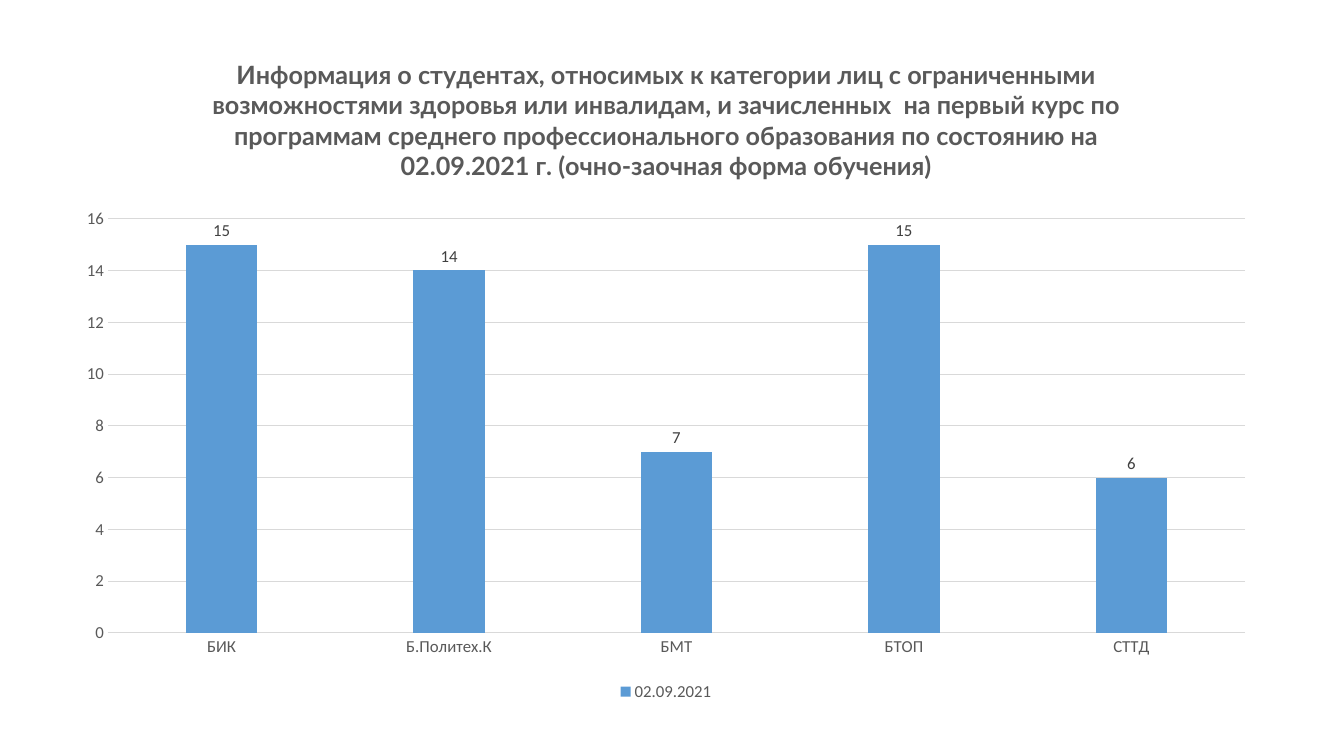
"""Builds a slide with a column chart of first-year student numbers by college."""
from lxml.etree import SubElement
from pptx import Presentation
from pptx.chart.data import CategoryChartData
from pptx.dml.color import RGBColor
from pptx.enum.chart import XL_CHART_TYPE, XL_LABEL_POSITION, XL_LEGEND_POSITION, XL_TICK_MARK
from pptx.oxml import parse_xml
from pptx.oxml.ns import nsdecls, qn
from pptx.util import Inches, Pt

HEADING = (
    "Информация о студентах, относимых к категории лиц с ограниченными "
    "возможностями здоровья или инвалидам, и зачисленных  на первый курс по "
    "программам среднего профессионального образования по состоянию на "
    "02.09.2021 г. (очно-заочная форма обучения)"
)
REPORT_DATE = "02.09.2021"
STUDENTS = {"БИК": 15, "Б.Политех.К": 14, "БМТ": 7, "БТОП": 15, "СТТД": 6}
COLORS = {"background": "FFFFFF", "columns": "5B9BD5", "text": "595959",
          "values": "404040", "lines": "D9D9D9"}
CHART_BOX = (0.62, 0.45, 11.97, 6.55)
HEADING_CORNER = {"x": 1.44, "y": 0.06}
PLOT_BOX = {"x": 0.45, "y": 1.72, "w": 11.28, "h": 4.11}


def color(name):
    return RGBColor.from_string(COLORS[name])


def style(font, size=12, tone="text", face="Calibri", bold=False):
    font.size = Pt(size)
    font.bold = bold
    font.name = face
    font.color.rgb = color(tone)


def write(frame, text, **text_format):
    run = frame.paragraphs[0].add_run()
    run.text = text
    style(run.font, **text_format)


def draw_line(line):
    line.color.rgb = color("lines")
    line.width = Pt(0.75)


def place(part, index, box, inner=False):
    for automatic in part.findall(qn("c:layout")):
        part.remove(automatic)
    layout = parse_xml(f"<c:layout {nsdecls('c')}><c:manualLayout/></c:layout>")
    manual = layout[0]
    if inner:
        SubElement(manual, qn("c:layoutTarget")).set("val", "inner")
    for side in ("x", "y"):
        SubElement(manual, qn(f"c:{side}Mode")).set("val", "edge")
    extents = dict(zip("xywh", CHART_BOX[2:] * 2))
    for side, inches in box.items():
        SubElement(manual, qn(f"c:{side}")).set("val", str(inches / extents[side]))
    part.insert(index, layout)


def add_student_chart(slide):
    counts = CategoryChartData()
    counts.categories = list(STUDENTS)
    counts.add_series(REPORT_DATE, list(STUDENTS.values()))
    chart = slide.shapes.add_chart(
        XL_CHART_TYPE.COLUMN_CLUSTERED, *map(Inches, CHART_BOX), counts).chart
    style(chart.font, size=10)

    chart.has_title = True
    heading = chart.chart_title
    write(heading.text_frame, HEADING, size=18, face="Lato", bold=True)
    heading.include_in_layout = False
    place(chart.element.find(".//" + qn("c:title")), 1, HEADING_CORNER)
    place(chart.element.find(".//" + qn("c:plotArea")), 0, PLOT_BOX, inner=True)

    chart.has_legend = True
    chart.legend.position = XL_LEGEND_POSITION.BOTTOM
    chart.legend.include_in_layout = False
    style(chart.legend.font)

    colleges, scale = chart.category_axis, chart.value_axis
    for axis in (colleges, scale):
        axis.major_tick_mark = axis.minor_tick_mark = XL_TICK_MARK.NONE
        style(axis.tick_labels.font)
    draw_line(colleges.format.line)
    scale.format.line.fill.background()
    scale.has_major_gridlines = True
    draw_line(scale.major_gridlines.format.line)

    columns = chart.plots[0]
    columns.gap_width = 219
    columns.overlap = -27
    columns.vary_by_categories = False
    enrolled = columns.series[0]
    enrolled.format.fill.solid()
    enrolled.format.fill.fore_color.rgb = color("columns")
    labels = enrolled.data_labels
    labels.show_value = True
    labels.position = XL_LABEL_POSITION.OUTSIDE_END
    style(labels.font, tone="values")


def main():
    deck = Presentation()
    deck.slide_width, deck.slide_height = Inches(13.33), Inches(7.5)
    slide = deck.slides.add_slide(deck.slide_layouts[6])
    slide.background.fill.solid()
    slide.background.fill.fore_color.rgb = color("background")
    add_student_chart(slide)
    deck.save("out.pptx")


if __name__ == "__main__":
    main()
